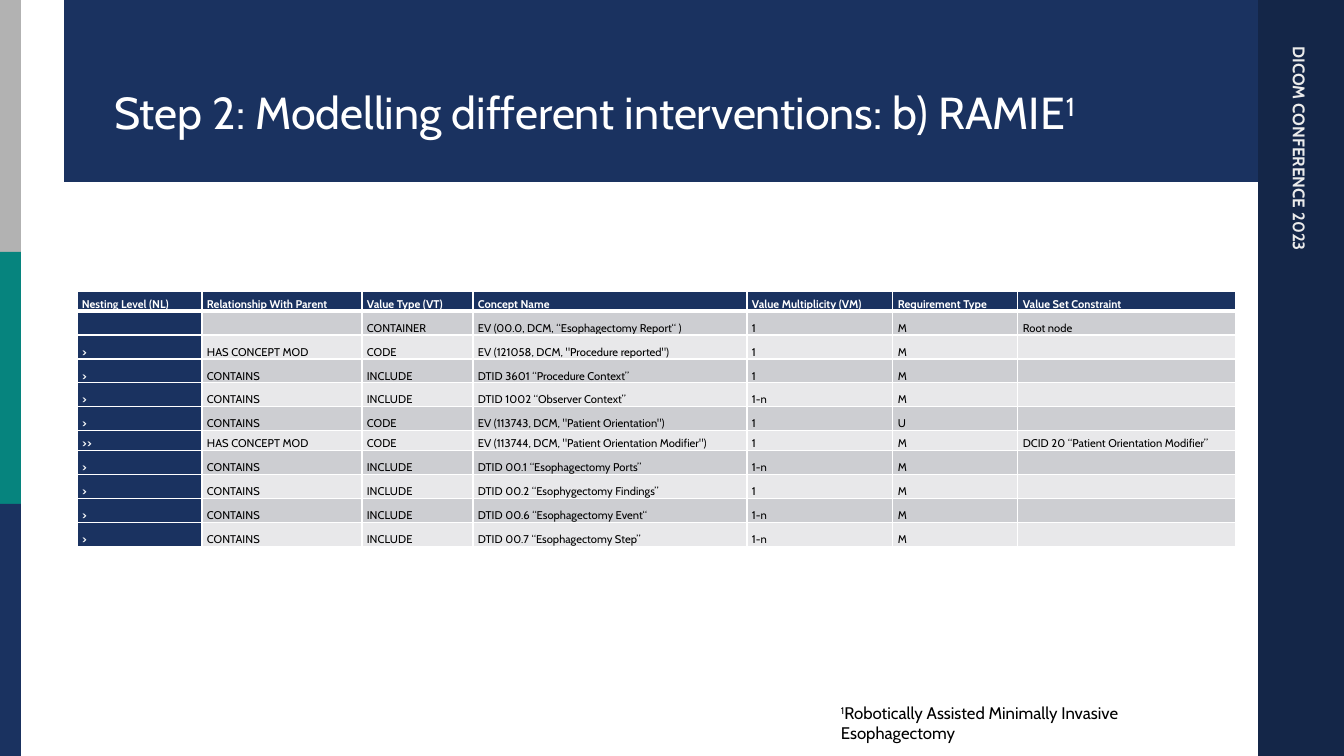
from dataclasses import dataclass

from lxml.etree import SubElement
from pptx import Presentation
from pptx.dml.color import RGBColor
from pptx.enum.shapes import MSO_SHAPE
from pptx.enum.text import MSO_ANCHOR, MSO_AUTO_SIZE, PP_ALIGN
from pptx.oxml.ns import qn
from pptx.util import Pt

TITLE = [("Step 2: Modelling different interventions: b) RAMIE", False), ("1", True)]
FOOTNOTE = [("1", True), ("Robotically Assisted Minimally Invasive Esophagectomy", False)]
CONFERENCE = [("DICOM CONFERENCE 2023", False)]

HEADERS = ["Nesting Level (NL)", "Relationship With Parent", "Value Type (VT)", "Concept Name",
           "Value Multiplicity (VM)", "Requirement Type", "Value Set Constraint"]
ROWS = [
    ("", "", "CONTAINER", "EV (00.0, DCM, “Esophagectomy Report“ )", "1", "M", "Root node"),
    (">", "HAS CONCEPT MOD", "CODE", 'EV (121058, DCM, "Procedure reported")', "1", "M", ""),
    (">", "CONTAINS", "INCLUDE", "DTID 3601 “Procedure Context”", "1", "M", ""),
    (">", "CONTAINS", "INCLUDE", "DTID 1002 “Observer Context”", "1-n", "M", ""),
    (">", "CONTAINS", "CODE", 'EV (113743, DCM, "Patient Orientation")', "1", "U", ""),
    (">>", "HAS CONCEPT MOD", "CODE", 'EV (113744, DCM, "Patient Orientation Modifier")', "1", "M",
     "DCID 20 “Patient Orientation Modifier”"),
    (">", "CONTAINS", "INCLUDE", "DTID 00.1 “Esophagectomy Ports”", "1-n", "M", ""),
    (">", "CONTAINS", "INCLUDE", "DTID 00.2 “Esophygectomy Findings”", "1", "M", ""),
    (">", "CONTAINS", "INCLUDE", "DTID 00.6 “Esophagectomy Event“", "1-n", "M", ""),
    (">", "CONTAINS", "INCLUDE", "DTID 00.7 “Esophagectomy Step”", "1-n", "M", ""),
]
COLUMN_WIDTHS = [125, 160, 111, 274, 146, 125, 218]
SHORT_ROW, TALL_ROW = 20, 24
SHORT_ROWS = (0, 6)
TABLE_LEFT, TABLE_TOP = 77, 291
SLIDE_WIDTH, SLIDE_HEIGHT = 1344, 756
SIDEBAR_LEFT, BANNER_LEFT, BANNER_HEIGHT = 1258, 64, 182
STRIPE_WIDTH = 21


@dataclass(frozen=True)
class Theme:
    """Colours, font and type sizes of the slide."""
    font: str = "Cabin"
    navy: str = "1A3260"
    dark_navy: str = "142648"
    teal: str = "06847E"
    gray: str = "B2B2B2"
    dark_band: str = "CDCED2"
    light_band: str = "E8E8EA"
    white: str = "FFFFFF"
    off_white: str = "EBEBEB"
    black: str = "000000"
    title_size: int = 32
    label_size: int = 12
    cell_size: int = 8


THEME = Theme()


def px(length):
    """Turn slide pixels into EMU."""
    return round(length * 914400 / 100.8)


def write_text(frame, runs, *, size, color, bold=False):
    """Write (text, is superscript) runs into the first paragraph and return it."""
    paragraph = frame.paragraphs[0]
    paragraph.alignment = PP_ALIGN.LEFT
    for text, superscript in runs:
        run = paragraph.add_run()
        run.text = text
        run.font.name = THEME.font
        run.font.size = Pt(size)
        run.font.bold = bold
        run.font.color.rgb = RGBColor.from_string(color)
        if superscript:
            run._r.get_or_add_rPr().set("baseline", "30000")
    return paragraph


def add_block(slide, left, top, width, height, color):
    """Add a plain filled rectangle."""
    block = slide.shapes.add_shape(MSO_SHAPE.RECTANGLE, px(left), px(top), px(width), px(height))
    block.shadow.inherit = False
    block.fill.solid()
    block.fill.fore_color.rgb = RGBColor.from_string(color)
    block.line.fill.background()


def add_label(slide, runs, left, top, width, height, *, color, bold=False, rotation=0):
    """Add a wrapping text box that grows with its text."""
    label = slide.shapes.add_textbox(px(left), px(top), px(width), px(height))
    label.rotation = rotation
    label.text_frame.word_wrap = True
    label.text_frame.auto_size = MSO_AUTO_SIZE.SHAPE_TO_FIT_TEXT
    write_text(label.text_frame, runs, size=THEME.label_size, color=color, bold=bold)


def add_borders(cell, bottom_width, top_width):
    """Draw white borders on the four sides of a cell."""
    properties = cell._tc.get_or_add_tcPr()
    for side, width in (("L", 1), ("R", 1), ("T", top_width), ("B", bottom_width)):
        line = SubElement(properties, qn(f"a:ln{side}"), w=str(Pt(width)))
        SubElement(SubElement(line, qn("a:solidFill")), qn("a:srgbClr"), val=THEME.white)


def fill_cell(cell, text, row_index, column_index):
    """Format one table cell and write its text."""
    is_head = row_index == 0 or column_index == 0
    band = THEME.dark_band if row_index % 2 else THEME.light_band
    add_borders(cell, 3 if row_index == 0 else 1, 3 if row_index == 1 else 1)
    cell.fill.solid()
    cell.fill.fore_color.rgb = RGBColor.from_string(THEME.navy if is_head else band)
    cell.margin_left = cell.margin_right = px(5)
    cell.margin_top = cell.margin_bottom = 0
    cell.vertical_anchor = MSO_ANCHOR.BOTTOM
    paragraph = write_text(cell.text_frame, [(text, False)] if text else [], size=THEME.cell_size,
                           color=THEME.white if is_head else THEME.black, bold=is_head)
    paragraph.line_spacing = 1.03
    paragraph.space_after = Pt(4)
    if not text:
        SubElement(paragraph._p, qn("a:endParaRPr"), sz=str(THEME.cell_size * 100))


def add_template_table(slide):
    """Add the table of report template rows."""
    heights = [SHORT_ROW if index in SHORT_ROWS else TALL_ROW for index in range(len(ROWS) + 1)]
    table = slide.shapes.add_table(len(heights), len(HEADERS), px(TABLE_LEFT), px(TABLE_TOP),
                                   px(sum(COLUMN_WIDTHS)), px(sum(heights))).table
    table.first_col = True
    table.horz_banding = False
    for column, width in zip(table.columns, COLUMN_WIDTHS):
        column.width = px(width)
    for row_index, texts in enumerate([HEADERS, *ROWS]):
        table.rows[row_index].height = px(heights[row_index])
        for column_index, text in enumerate(texts):
            fill_cell(table.cell(row_index, column_index), text, row_index, column_index)


def place_title(slide):
    """Place the title placeholder over the banner."""
    title = slide.shapes.title
    title.left, title.top, title.width, title.height = px(104), px(41), px(1112), px(103)
    title.text_frame.word_wrap = True
    title.text_frame.auto_size = MSO_AUTO_SIZE.NONE
    title.text_frame.vertical_anchor = MSO_ANCHOR.BOTTOM
    write_text(title.text_frame, TITLE, size=THEME.title_size, color=THEME.white)
    title.element.getparent().append(title.element)


def main():
    """Build the slide and save it."""
    presentation = Presentation()
    presentation.slide_width, presentation.slide_height = px(SLIDE_WIDTH), px(SLIDE_HEIGHT)
    slide = presentation.slides.add_slide(presentation.slide_layouts[5])
    add_block(slide, SIDEBAR_LEFT, 0, SLIDE_WIDTH - SIDEBAR_LEFT, SLIDE_HEIGHT, THEME.dark_navy)
    add_label(slide, CONFERENCE, 1070, 251, 459, 30, color=THEME.off_white, bold=True, rotation=90)
    stripe_height = SLIDE_HEIGHT // 3
    for index, color in enumerate((THEME.gray, THEME.teal, THEME.navy)):
        add_block(slide, 0, index * stripe_height, STRIPE_WIDTH, stripe_height, color)
    add_block(slide, BANNER_LEFT, 0, SIDEBAR_LEFT - BANNER_LEFT, BANNER_HEIGHT, THEME.navy)
    place_title(slide)
    add_template_table(slide)
    add_label(slide, FOOTNOTE, 831, 698, 404, 30, color=THEME.black)
    presentation.save("out.pptx")


if __name__ == "__main__":
    main()
